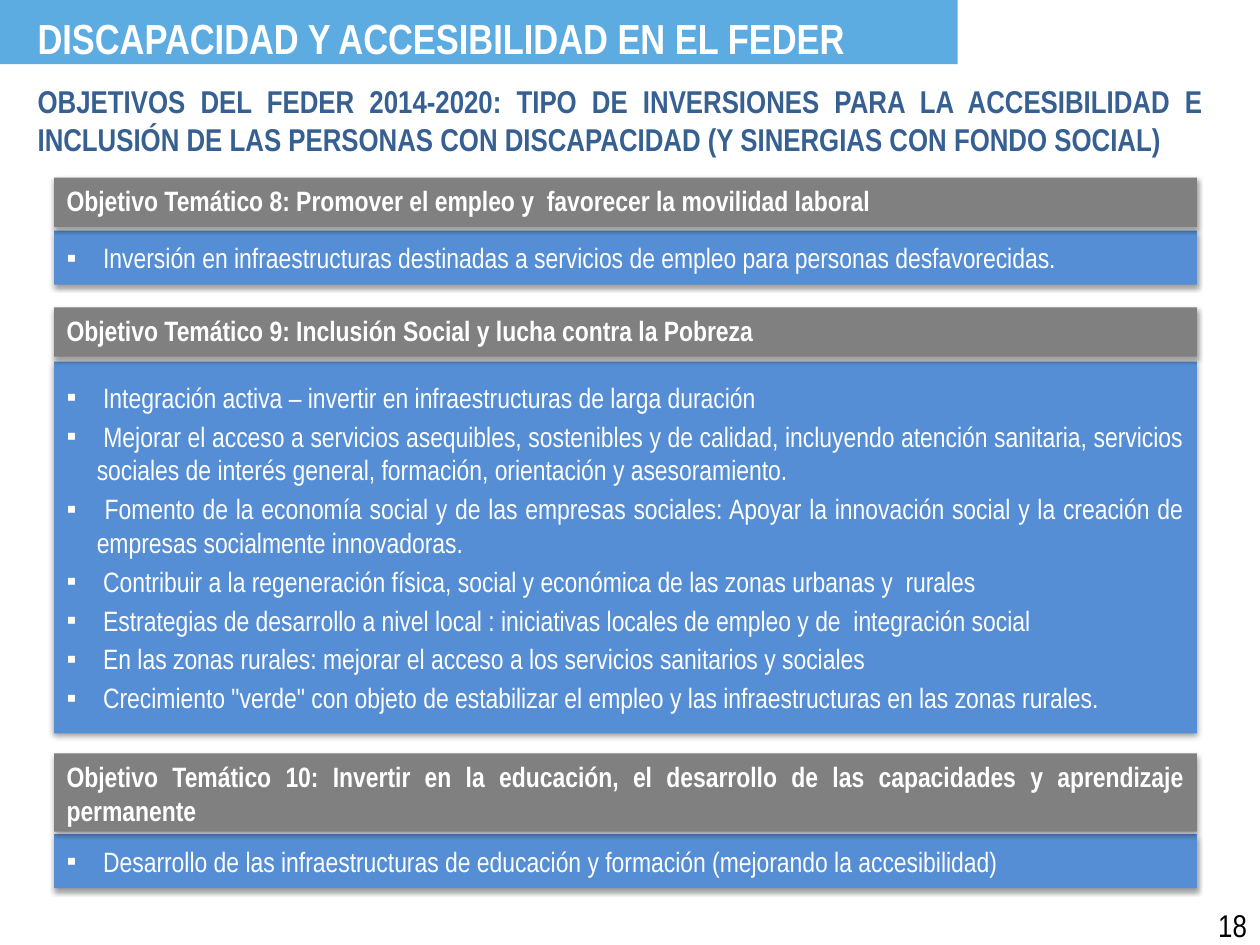
from lxml import etree
from pptx import Presentation
from pptx.dml.color import RGBColor
from pptx.enum.shapes import MSO_SHAPE
from pptx.enum.text import MSO_ANCHOR, PP_ALIGN
from pptx.oxml.ns import qn
from pptx.util import Inches, Pt

RECTANGLE = MSO_SHAPE.RECTANGLE
TOP, MIDDLE = MSO_ANCHOR.TOP, MSO_ANCHOR.MIDDLE
LEFT, JUSTIFY = PP_ALIGN.LEFT, PP_ALIGN.JUSTIFY
FONT = "Arial Narrow"
COLORS = {
    "banner": "5CACE2",
    "header": "808080",
    "body": "558ED5",
    "subtitle": "376092",
    "white": "FFFFFF",
    "black": "000000",
}
SECTION_LEFT, SECTION_WIDTH = 0.43, 9.07
BULLET_INDENT = Inches(0.24)

SECTIONS = [
    {
        "top": 1.41, "header_height": 0.39, "body_top": 1.83, "body_height": 0.43,
        "title": "Objetivo Temático 8: Promover el empleo y  favorecer la movilidad laboral",
        "items": [
            "Inversión en infraestructuras destinadas a servicios de empleo para personas desfavorecidas.",
        ],
    },
    {
        "top": 2.44, "header_height": 0.39, "body_top": 2.87, "body_height": 2.95,
        "title": "Objetivo Temático 9: Inclusión Social y lucha contra la Pobreza",
        "items": [
            "Integración activa – invertir en infraestructuras de larga duración",
            "Mejorar el acceso a servicios asequibles, sostenibles y de calidad, incluyendo atención "
            "sanitaria, servicios sociales de interés general, formación, orientación y asesoramiento.",
            "Fomento de la economía social y de las empresas sociales: Apoyar la innovación social y la "
            "creación de empresas socialmente innovadoras.",
            "Contribuir a la regeneración física, social y económica de las zonas urbanas y  rurales",
            "Estrategias de desarrollo a nivel local : iniciativas locales de empleo y de  integración social",
            "En las zonas rurales: mejorar el acceso a los servicios sanitarios y sociales",
            'Crecimiento "verde" con objeto de estabilizar el empleo y las infraestructuras en las zonas rurales.',
        ],
    },
    {
        "top": 5.98, "header_height": 0.62, "body_top": 6.62, "body_height": 0.43,
        "title": "Objetivo Temático 10: Invertir en la educación, el desarrollo de las capacidades "
                 "y aprendizaje permanente",
        "items": [
            "Desarrollo de las infraestructuras de educación y formación (mejorando la accesibilidad)",
        ],
    },
]


def add_bullet(paragraph):
    """Give a paragraph a hanging square bullet."""
    properties = paragraph._p.get_or_add_pPr()
    properties.set("marL", str(BULLET_INDENT))
    properties.set("indent", str(-BULLET_INDENT))
    etree.SubElement(properties, qn("a:buFont"), typeface="Arial")
    etree.SubElement(properties, qn("a:buChar"), char="▪")


def write_text(shape, lines, size=16, color="white", bold=False, align=JUSTIFY,
               anchor=TOP, bullets=False, wrap=True):
    """Fill a shape with one formatted paragraph per line."""
    frame = shape.text_frame
    frame.word_wrap = wrap
    frame.vertical_anchor = anchor
    for index, line in enumerate(lines):
        paragraph = frame.add_paragraph() if index else frame.paragraphs[0]
        paragraph.alignment = align
        paragraph.space_before = Pt(3 if index else 0)
        if bullets:
            add_bullet(paragraph)
        run = paragraph.add_run()
        run.text = f" {line}" if bullets else line
        run.font.name = FONT
        run.font.size = Pt(size)
        run.font.bold = bold
        run.font.color.rgb = RGBColor.from_string(COLORS[color])


def add_shadow(shape):
    """Add a soft shadow falling straight down."""
    effects = shape._element.spPr.find(qn("a:effectLst"))
    shadow = etree.SubElement(effects, qn("a:outerShdw"), blurRad=str(Pt(3.1)),
                              dist=str(Pt(1.6)), dir="5400000", rotWithShape="0")
    color = etree.SubElement(shadow, qn("a:srgbClr"), val=COLORS["black"])
    etree.SubElement(color, qn("a:alpha"), val="38000")


def add_panel(slide, left, top, width, height, color):
    """Add a filled rectangle without outline or shadow."""
    shape = slide.shapes.add_shape(
        RECTANGLE, Inches(left), Inches(top), Inches(width), Inches(height))
    shape.shadow.inherit = False
    shape.fill.solid()
    shape.fill.fore_color.rgb = RGBColor.from_string(COLORS[color])
    shape.line.fill.background()
    return shape


def add_label(slide, left, top, width, height, text, **style):
    """Add a text box holding one paragraph."""
    box = slide.shapes.add_textbox(
        Inches(left), Inches(top), Inches(width), Inches(height))
    write_text(box, [text], **style)


def add_heading(slide, left, top):
    """Place the banner, its title and the subtitle below."""
    add_panel(slide, left, top, 7.6, 0.51, "banner")
    add_label(slide, left + 0.2, top + 0.05, 7, 0.37,
              "DISCAPACIDAD Y ACCESIBILIDAD EN EL FEDER", size=24, bold=True)
    add_label(slide, left + 0.2, top + 0.6, 9.45, 0.84,
              "OBJETIVOS DEL FEDER 2014-2020: TIPO DE INVERSIONES PARA LA ACCESIBILIDAD E INCLUSIÓN "
              "DE LAS PERSONAS CON DISCAPACIDAD (Y SINERGIAS CON FONDO SOCIAL)",
              size=18, color="subtitle", bold=True)


def add_section(slide, left, width, section):
    """Place the bulleted body of an objective and its header."""
    body = add_panel(slide, left, section["body_top"], width, section["body_height"], "body")
    header = add_panel(slide, left, section["top"], width, section["header_height"], "header")
    for panel in (body, header):
        add_shadow(panel)
    write_text(body, section["items"], anchor=MIDDLE, bullets=True)
    write_text(header, [section["title"]], bold=True)


def main():
    """Build and save the slide."""
    presentation = Presentation()
    presentation.slide_width, presentation.slide_height = Inches(10), Inches(7.5)
    slide = presentation.slides.add_slide(presentation.slide_layouts[6])
    add_heading(slide, 0, 0)
    for section in reversed(SECTIONS):
        add_section(slide, SECTION_LEFT, SECTION_WIDTH, section)
    add_label(slide, 9.57, 7.14, 0.43, 0.36, "18", size=18, color="black",
              align=LEFT, wrap=False)
    presentation.save("out.pptx")


if __name__ == "__main__":
    main()
